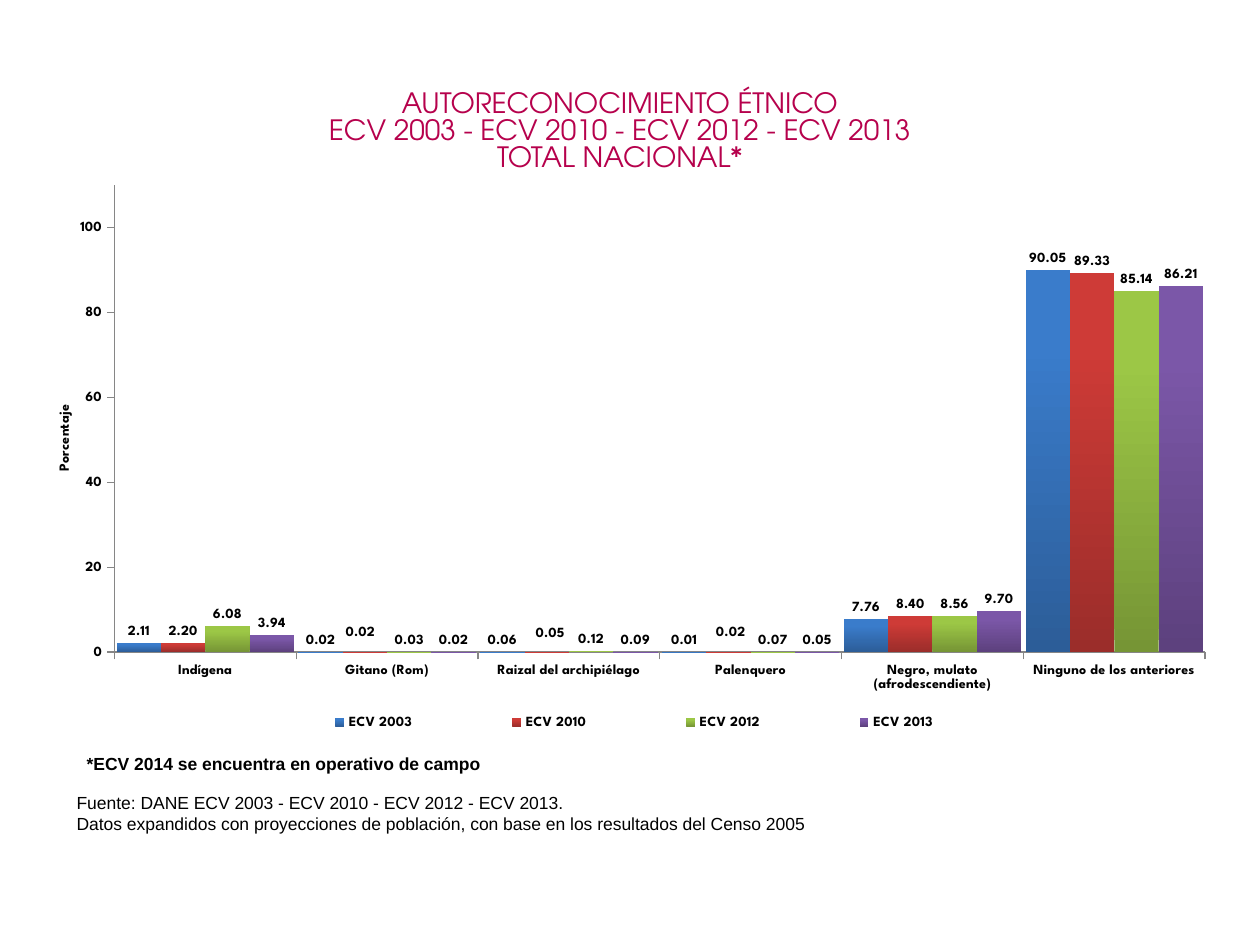
from lxml.etree import SubElement
from pptx import Presentation
from pptx.chart.data import CategoryChartData
from pptx.dml.color import RGBColor
from pptx.enum.chart import XL_CHART_TYPE, XL_LABEL_POSITION, XL_LEGEND_POSITION, XL_TICK_MARK
from pptx.enum.text import MSO_ANCHOR, PP_ALIGN
from pptx.oxml.ns import qn
from pptx.util import Inches, Pt

BLACK = RGBColor(0x00, 0x00, 0x00)
GREY = RGBColor(0x86, 0x86, 0x86)
CRIMSON = RGBColor(0xB6, 0x01, 0x4C)

CATEGORIES = ["Indígena", "Gitano (Rom)", "Raizal del archipiélago", "Palenquero",
              "Negro, mulato (afrodescendiente)", "Ninguno de los anteriores"]
# Survey: values, bottom colour and top colour of its columns
SURVEYS = {
    "ECV 2003": ([2.11, 0.02, 0.06, 0.01, 7.76, 90.05],
                 RGBColor(0x2C, 0x5D, 0x98), RGBColor(0x3A, 0x7C, 0xCB)),
    "ECV 2010": ([2.2, 0.02, 0.05, 0.02, 8.4, 89.33],
                 RGBColor(0x9B, 0x2D, 0x2A), RGBColor(0xCE, 0x3B, 0x37)),
    "ECV 2012": ([6.08, 0.03, 0.12, 0.07, 8.56, 85.14],
                 RGBColor(0x76, 0x95, 0x35), RGBColor(0x9C, 0xC7, 0x46)),
    "ECV 2013": ([3.94, 0.02, 0.09, 0.05, 9.7, 86.21],
                 RGBColor(0x5D, 0x41, 0x7E), RGBColor(0x7B, 0x57, 0xA8)),
}
# Labels of ECV 2010 moved off their neighbours, as shares of the chart size
LABEL_SHIFTS = {1: (-0.004, -0.014), 2: (0.003, -0.012), 3: (0.002, -0.014)}


def add_layout(parent, index, **settings):
    """Put a manual layout at the given child index of a chart element."""
    layout = SubElement(parent, qn("c:layout"))
    manual = SubElement(layout, qn("c:manualLayout"))
    for tag, value in settings.items():
        SubElement(manual, qn(f"c:{tag}")).set("val", str(value))
    parent.insert(index, layout)


class SurveySlide:
    title_font = "TeX Gyre Adventor"
    note_font = "Arial"
    chart_font = "League Spartan"

    def __init__(self, presentation):
        self.slide = presentation.slides.add_slide(presentation.slide_layouts[5])

    def style(self, font, name, size, color=BLACK, bold=False):
        font.name, font.size, font.bold = name, Pt(size), bold
        font.color.rgb = color

    def title(self, paragraphs, left, top, width, height):
        title = self.slide.shapes.title
        title.left, title.top = Inches(left), Inches(top)
        title.width, title.height = Inches(width), Inches(height)
        frame = title.text_frame
        frame.text = "\n".join(paragraphs)
        frame.vertical_anchor = MSO_ANCHOR.TOP
        frame.margin_top = Inches(0.1)
        for paragraph in frame.paragraphs:
            paragraph.alignment = PP_ALIGN.CENTER
            paragraph.line_spacing = 0.8
            paragraph.space_before = Pt(0)
            self.style(paragraph.font, self.title_font, 16, CRIMSON)

    def note(self, lines, left, top, width, height, bold=False):
        box = self.slide.shapes.add_textbox(Inches(left), Inches(top),
                                            Inches(width), Inches(height))
        frame = box.text_frame
        frame.word_wrap = True
        frame.vertical_anchor = MSO_ANCHOR.BOTTOM
        frame.text = "\n".join(lines)
        for paragraph in frame.paragraphs:
            self.style(paragraph.font, self.note_font, 10, bold=bold)

    def column_chart(self, left, top, width, height):
        data = CategoryChartData(number_format="0.00")
        data.categories = CATEGORIES
        for name, (values, _, _) in SURVEYS.items():
            data.add_series(name, values)
        chart = self.slide.shapes.add_chart(
            XL_CHART_TYPE.COLUMN_CLUSTERED, Inches(left), Inches(top),
            Inches(width), Inches(height), data).chart
        chart.has_title = False
        self.style(chart.font, self.chart_font, 8, bold=True)
        add_layout(chart.plots[0]._element.getparent(), 0, layoutTarget="inner",
                   xMode="edge", yMode="edge", x=0.052, y=0.018, w=0.94, h=0.827)
        self.axes(chart)
        self.columns(chart.plots[0])
        chart.has_legend = True
        chart.legend.position = XL_LEGEND_POSITION.BOTTOM
        chart.legend.include_in_layout = False
        add_layout(chart.legend._element, 1, xMode="edge", yMode="edge",
                   x=0.16, y=0.945, w=0.68, h=0.05)

    def axes(self, chart):
        for axis in (chart.category_axis, chart.value_axis):
            axis.has_major_gridlines = False
            axis.major_tick_mark = XL_TICK_MARK.OUTSIDE
            axis.format.line.color.rgb = GREY
            self.style(axis.tick_labels.font, self.chart_font, 8, bold=True)
        percent = chart.value_axis
        percent.minimum_scale, percent.maximum_scale, percent.major_unit = 0, 110, 20
        percent.tick_labels.number_format = "#,##0"
        percent.tick_labels.number_format_is_linked = False
        heading = percent.axis_title.text_frame
        heading.text = "Porcentaje"
        self.style(heading.paragraphs[0].font, self.chart_font, 8, bold=True)

    def columns(self, plot):
        plot.gap_width, plot.overlap = 10, 0
        plot.vary_by_categories = False
        for series, (_, bottom, top) in zip(plot.series, SURVEYS.values()):
            fill = series.format.fill
            fill.gradient()
            fill.gradient_angle = 90
            for stop, color, position in zip(fill.gradient_stops, (bottom, top), (0, 0.8)):
                stop.color.rgb, stop.position = color, position
            labels = series.data_labels
            labels.show_value = True
            labels.number_format = "0.00"
            labels.number_format_is_linked = False
            labels.position = XL_LABEL_POSITION.OUTSIDE_END
            self.style(labels.font, self.chart_font, 8, bold=True)
        self.shift_labels(plot.series[1])

    def shift_labels(self, series):
        for index, (x, y) in LABEL_SHIFTS.items():
            label = series.points[index].data_label
            self.style(label.font, self.chart_font, 8, bold=True)
            label.position = XL_LABEL_POSITION.OUTSIDE_END
            element = next(item for item in series.data_labels._element.findall(qn("c:dLbl"))
                           if item.find(qn("c:idx")).get("val") == str(index))
            add_layout(element, 1, x=x, y=y)
            number_format = SubElement(element, qn("c:numFmt"))
            number_format.set("formatCode", "0.00")
            number_format.set("sourceLinked", "0")
            element.insert(2, number_format)


def main():
    presentation = Presentation()
    presentation.slide_width, presentation.slide_height = Inches(10), Inches(7.5)
    survey = SurveySlide(presentation)
    survey.column_chart(0.43, 1.39, 9.21, 4.48)
    survey.note(["Fuente: DANE ECV 2003 - ECV 2010 - ECV 2012 - ECV 2013.",
                 "Datos expandidos con proyecciones de población, "
                 "con base en los resultados del Censo 2005"], 0.51, 6.06, 6.54, 0.61)
    survey.title(["AUTORECONOCIMIENTO ÉTNICO\vECV 2003 - ECV 2010 - ECV 2012 - ECV 2013",
                  "TOTAL NACIONAL*"], 1.85, 0.63, 6.14, 0.98)
    survey.note(["*ECV 2014 se encuentra en operativo de campo"], 0.59, 5.92, 5, 0.27, bold=True)
    presentation.save("out.pptx")


if __name__ == "__main__":
    main()
